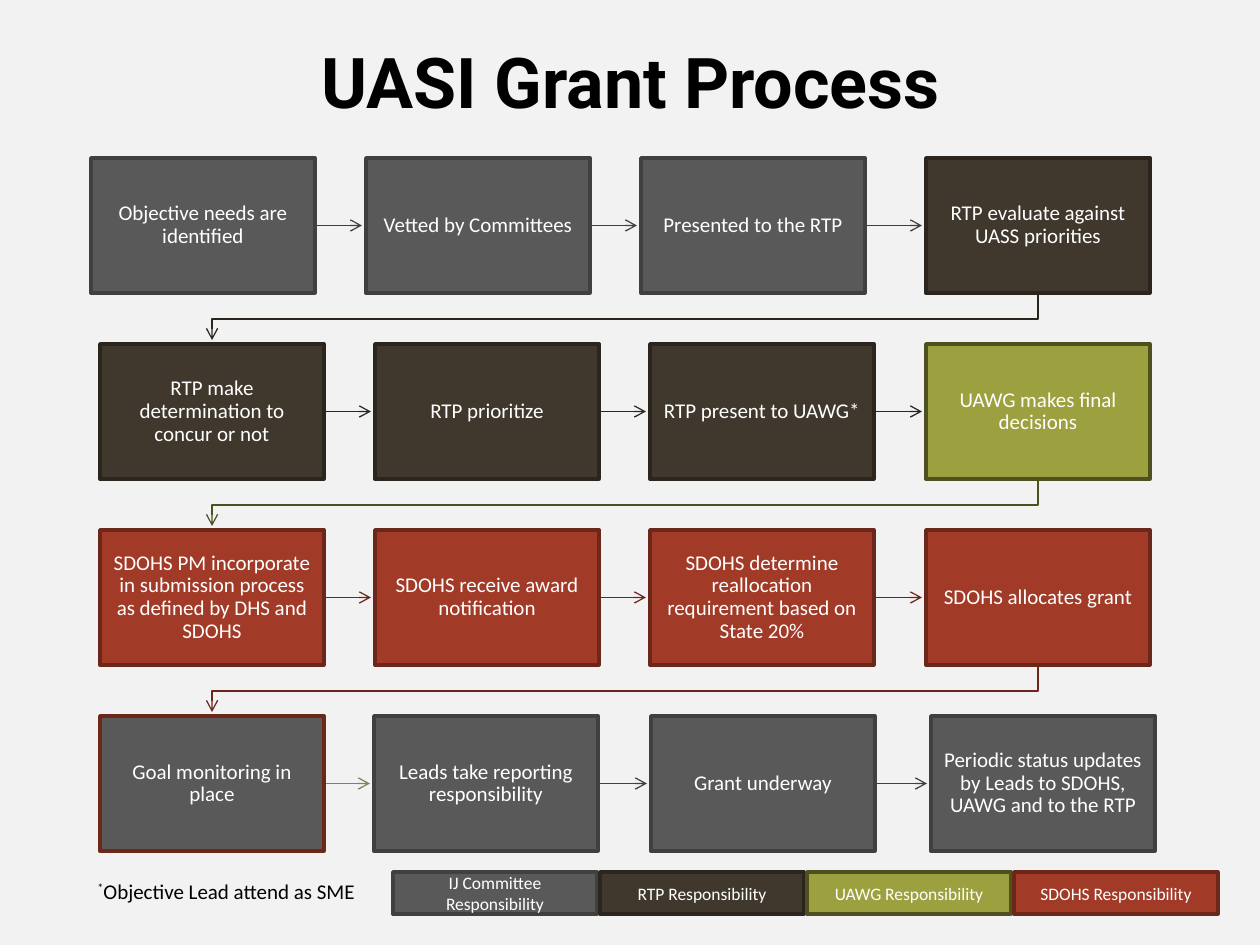
from pptx import Presentation
from pptx.dml.color import RGBColor
from pptx.enum.shapes import MSO_CONNECTOR, MSO_SHAPE
from pptx.enum.text import MSO_ANCHOR, MSO_AUTO_SIZE, PP_ALIGN
from pptx.oxml.ns import qn
from pptx.util import Pt
from lxml.etree import SubElement

PX = 914400 / 126
WIDE, HIGH, TOP, STEP = 224, 135, 158, 186
GAP, DROP = 4, 26

HUES = {
    "page": "F2F2F2", "black": "000000", "white": "FFFFFF",
    "gray": "595959", "gray line": "404040",
    "brown": "40382D", "brown line": "2B251E",
    "green": "9DA03F", "green line": "4E501F",
    "red": "A23A28", "red line": "6C271B",
    "olive": "848058",
}

ROWS = [
    [(91, "gray", "Objective needs are identified"),
     (366, "gray", "Vetted by Committees"),
     (641, "gray", "Presented to the RTP"),
     (926, "brown", "RTP evaluate against UASS priorities")],
    [(100, "brown", "RTP make determination to concur or not"),
     (375, "brown", "RTP prioritize"),
     (650, "brown", "RTP present to UAWG*"),
     (926, "green", "UAWG makes final decisions")],
    [(100, "red", "SDOHS PM incorporate in submission process as defined by DHS and SDOHS"),
     (375, "red", "SDOHS receive award notification"),
     (650, "red", "SDOHS determine reallocation requirement based on State 20%"),
     (926, "red", "SDOHS allocates grant")],
    [(100, "gray", "Goal monitoring in place"),
     (374, "gray", "Leads take reporting responsibility"),
     (651, "gray", "Grant underway"),
     (931, "gray", "Periodic status updates by Leads to SDOHS, UAWG and to the RTP")],
]
EDGES = {(3, 0): "red line"}
LINKS = {(3, 0): "olive"}

KEYS = [("gray", "IJ Committee Responsibility"), ("brown", "RTP Responsibility"),
        ("green", "UAWG Responsibility"), ("red", "SDOHS Responsibility")]

TITLE = "UASI Grant Process"
NOTE = ("*", "Objective Lead attend as SME")


def emu(*nums):
    return [round(n * PX) for n in nums]


def tint(name):
    return RGBColor.from_string(HUES[name])


def apply(item, form):
    for key, val in form.items():
        setattr(item, key, val)


def write(shape, runs, size, hue, face="Calibri", bold=False, para={}, frame={}):
    text = shape.text_frame
    apply(text, {"word_wrap": True, **frame})
    line = text.paragraphs[0]
    apply(line, para)
    for part in runs:
        run = line.add_run()
        run.text = part
        apply(run.font, {"size": Pt(size), "name": face, "bold": bold})
        run.font.color.rgb = tint(hue)
    return line.runs


def box(slide, area, hue, edge, words, size, para={}, frame={}):
    shape = slide.shapes.add_shape(MSO_SHAPE.RECTANGLE, *emu(*area))
    shape.shadow.inherit = False
    shape.fill.solid()
    shape.fill.fore_color.rgb = tint(hue)
    shape.line.color.rgb = tint(edge)
    shape.line.width = Pt(2)
    write(shape, [words], size, "white",
          para={"alignment": PP_ALIGN.CENTER, **para},
          frame={"vertical_anchor": MSO_ANCHOR.MIDDLE, **frame})


def arrow(shape, hue):
    shape.line.color.rgb = tint(hue)
    shape.line.width = Pt(0.75)
    prop = shape.element.spPr
    SubElement(prop.find(qn("a:ln")), qn("a:tailEnd"), type="arrow")
    SubElement(prop, qn("a:effectLst"))


def straight(slide, left, right, y, hue):
    arrow(slide.shapes.add_connector(
        MSO_CONNECTOR.STRAIGHT, *emu(left, y, right, y)), hue)


def elbow(slide, start, end, hue):
    (x, y), (left, low) = start, end
    path = slide.shapes.build_freeform(*emu(x, y))
    turns = [(x, y + DROP), (left, y + DROP), (left, low)]
    path.add_line_segments([emu(*spot) for spot in turns], close=False)
    shape = path.convert_to_shape()
    shape.fill.background()
    arrow(shape, hue)


def label(slide, area, runs, size, **form):
    shape = slide.shapes.add_textbox(*emu(*area))
    return write(shape, runs, size, "black",
                 frame={"auto_size": MSO_AUTO_SIZE.SHAPE_TO_FIT_TEXT}, **form)


def flow(slide):
    inset = emu(11)[0]
    sides = ("margin_left", "margin_right", "margin_top", "margin_bottom")
    frame = {side: inset for side in sides}
    for r, row in enumerate(ROWS):
        top = TOP + r * STEP
        for c, (left, hue, words) in enumerate(row):
            edge = EDGES.get((r, c), hue + " line")
            link = LINKS.get((r, c), edge)
            if c + 1 < len(row):
                straight(slide, left + WIDE, row[c + 1][0] - GAP, top + HIGH / 2, link)
            elif r + 1 < len(ROWS):
                first = ROWS[r + 1][0][0]
                elbow(slide, (left + WIDE / 2, top + HIGH),
                      (first + WIDE / 2, top + STEP - GAP), link)
            box(slide, (left, top, WIDE, HIGH), hue, edge, words, 12,
                {"line_spacing": 0.9}, frame)


def main():
    deck = Presentation()
    deck.slide_width, deck.slide_height = emu(1260, 945)
    slide = deck.slides.add_slide(deck.slide_layouts[6])
    slide.background.fill.solid()
    slide.background.fill.fore_color.rgb = tint("page")
    flow(slide)
    label(slide, (116, 32, 1029, 97), [TITLE], 40, face="Roboto", bold=True,
          para={"alignment": PP_ALIGN.CENTER})
    star = label(slide, (85, 872, 294, 38), NOTE, 12)[0]
    star.font.element.set("baseline", "30000") if hasattr(star.font, "element") else \
        star._r.get_or_add_rPr().set("baseline", "30000")
    for i, (hue, words) in enumerate(KEYS):
        box(slide, (393 + i * 207, 872, 204, 42), hue, hue + " line", words, 10)
    deck.save("out.pptx")


if __name__ == "__main__":
    main()
